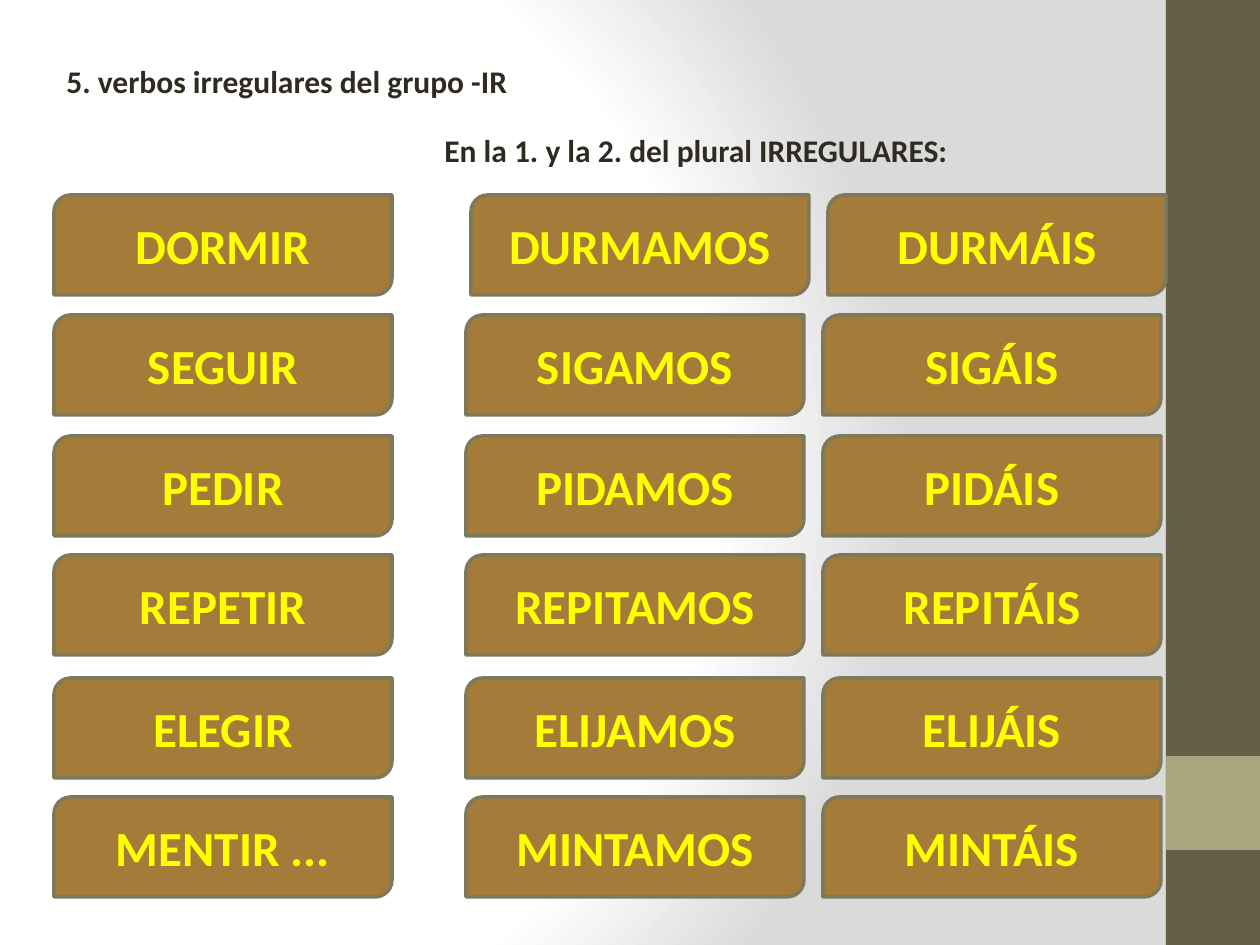
from pptx import Presentation
from pptx.dml.color import RGBColor as Rgb
from pptx.enum.shapes import MSO_SHAPE as Shape
from pptx.enum.text import MSO_ANCHOR as Anchor, MSO_AUTO_SIZE as AutoSize, PP_ALIGN as Align
from pptx.oxml import parse_xml
from pptx.oxml.ns import nsdecls, qn
from pptx.util import Pt

PX = 914400 // 126
COLORS = {
    "white": "FFFFFF", "shade": "DADADA", "band": "675E47", "square": "A9A57C",
    "tile": "A47B38", "border": "7D7A5C", "tile_text": "FFFF00", "heading": "2F2B20",
}


def add_block(kind, left, top, width, height, color):
    block = page.shapes.add_shape(kind, left * PX, top * PX, width * PX, height * PX)
    block.shadow.inherit = False
    block.fill.solid()
    block.fill.fore_color.rgb = Rgb.from_string(COLORS[color])
    block.line.fill.background()
    return block


def write(box, text, size, color):
    para = box.text_frame.paragraphs[0]
    para.text = text
    font = para.runs[0].font
    font.name, font.size, font.bold = "Calibri", Pt(size), True
    font.color.rgb = Rgb.from_string(COLORS[color])
    return para


deck = Presentation()
deck.slide_width, deck.slide_height = 1260 * PX, 945 * PX
page = deck.slides.add_slide(deck.slide_layouts[6])

# Background: circular gradient spreading from the left
page.background.fill.gradient()
gradient = page.background._cSld.find(".//" + qn("a:gradFill"))
stops = "".join(
    f'<a:gs pos="{percent * 1000}"><a:srgbClr val="{COLORS[color]}"/></a:gs>'
    for percent, color in [(0, "white"), (75, "white"), (100, "shade")]
)
gradient.getparent().replace(gradient, parse_xml(
    f'<a:gradFill {nsdecls("a")} rotWithShape="1"><a:gsLst>{stops}</a:gsLst>'
    '<a:path path="circle"><a:fillToRect l="20000" t="50000" r="100000" b="50000"/>'
    '</a:path></a:gradFill>'
))

# Right-hand band with its square
add_block(Shape.RECTANGLE, 1166, 0, 94, 945, "band")
add_block(Shape.RECTANGLE, 1166, 756, 94, 94, "square")

# Headings
for text, left, top, width in [
    ("5. verbos irregulares del grupo -IR", 54, 56, 470),
    ("En la 1. y la 2. del plural IRREGULARES:", 432, 125, 533),
]:
    heading = page.shapes.add_textbox(left * PX, top * PX, width * PX, 50 * PX)
    heading.text_frame.word_wrap = False
    heading.text_frame.auto_size = AutoSize.SHAPE_TO_FIT_TEXT
    write(heading, text, 18, "heading")

# Verb tiles: infinitive, first and second person plural
COLUMNS = [54, 466, 823]
VERBS = [
    (195, "DORMIR", "DURMAMOS", "DURMÁIS"),
    (315, "SEGUIR", "SIGAMOS", "SIGÁIS"),
    (436, "PEDIR", "PIDAMOS", "PIDÁIS"),
    (555, "REPETIR", "REPITAMOS", "REPITÁIS"),
    (678, "ELEGIR", "ELIJAMOS", "ELIJÁIS"),
    (797, "MENTIR ...", "MINTAMOS", "MINTÁIS"),
]
for top, *forms in VERBS:
    for left, form in zip(COLUMNS, forms):
        # The first pair of plural forms stands slightly to the right
        shift = 5 if top == VERBS[0][0] and left != COLUMNS[0] else 0
        tile = add_block(Shape.ROUND_2_DIAG_RECTANGLE, left + shift, top, 338, 100, "tile")
        tile.line.color.rgb = Rgb.from_string(COLORS["border"])
        tile.line.width = Pt(2)
        tile.text_frame.vertical_anchor = Anchor.MIDDLE
        write(tile, form, 28, "tile_text").alignment = Align.CENTER

deck.save("out.pptx")
